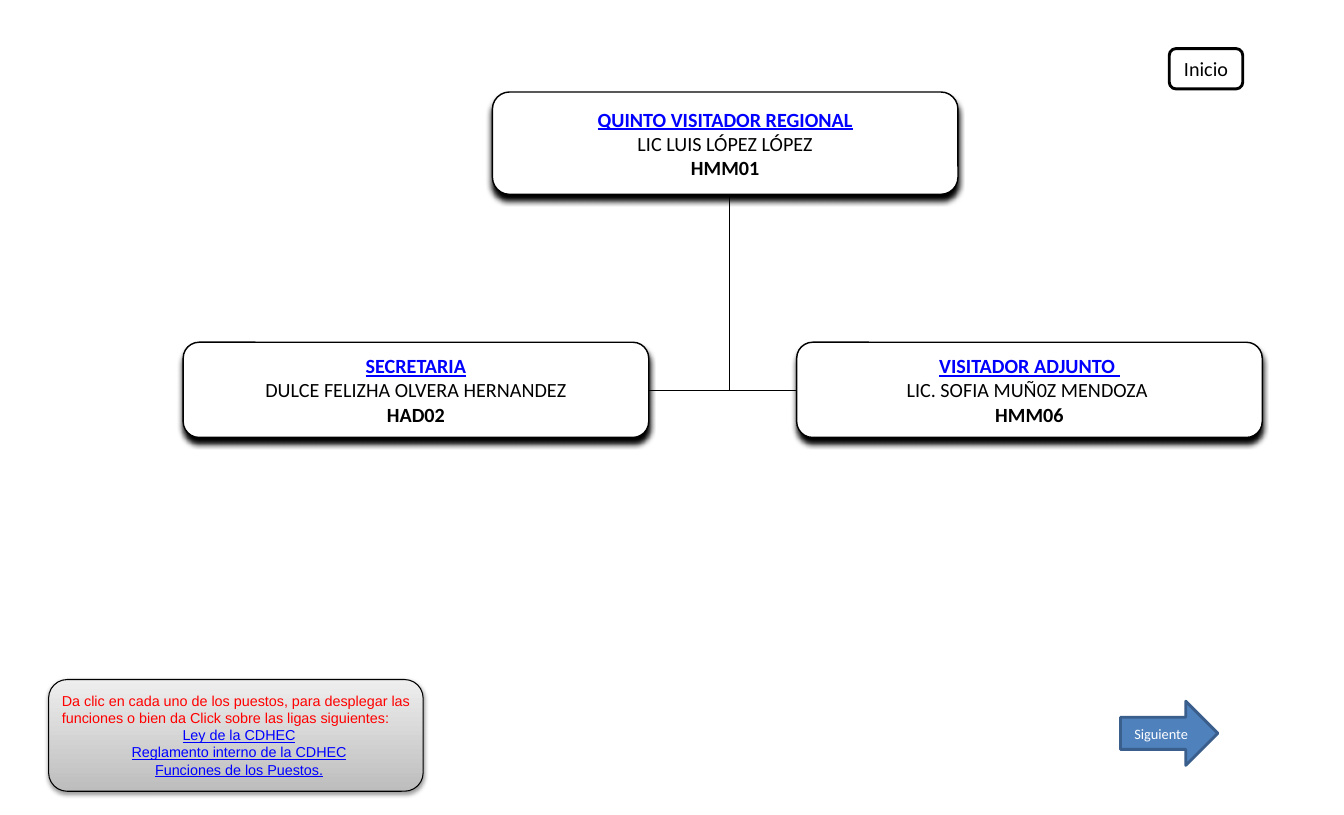
from lxml.etree import SubElement
from pptx import Presentation
from pptx.dml.color import RGBColor
from pptx.enum.shapes import MSO_CONNECTOR, MSO_SHAPE
from pptx.enum.text import MSO_ANCHOR, MSO_AUTO_SIZE, PP_ALIGN
from pptx.oxml.ns import qn
from pptx.util import Inches, Pt

WIDTH, HEIGHT = Inches(12.99), Inches(7.88)
COLUMN, ROW = WIDTH / 100, HEIGHT / 100

BLACK = RGBColor(0x00, 0x00, 0x00)
WHITE = RGBColor(0xFF, 0xFF, 0xFF)
LINK_BLUE = RGBColor(0x00, 0x00, 0xFF)
NOTICE_RED = RGBColor(0xFF, 0x00, 0x00)
ARROW_BLUE = RGBColor(0x4F, 0x81, 0xBD)
ARROW_EDGE = RGBColor(0x3A, 0x5F, 0x8C)
PANEL_DARK = RGBColor(0xBD, 0xBD, 0xBD)
PANEL_LIGHT = RGBColor(0xEE, 0xEE, 0xEE)

POST_WIDTH = 34.64
POST_ROW, POST_HEIGHT = 42, 11.68
BRANCH_ROW = 47.97
TRUNK_COLUMN = 54.27

POSTS = [
    (36.64, 11.29, 12.56,
     ["QUINTO VISITADOR REGIONAL", "LIC LUIS LÓPEZ LÓPEZ", "HMM01"]),
    (13.63, POST_ROW, POST_HEIGHT,
     ["SECRETARIA", "DULCE FELIZHA OLVERA HERNANDEZ", "HAD02"]),
    (59.28, POST_ROW, POST_HEIGHT,
     ["VISITADOR ADJUNTO ", "LIC. SOFIA MUÑ0Z MENDOZA ", "HMM06"]),
]
NOTICE = [
    "Da clic en cada uno de los puestos, para desplegar las funciones "
    "o bien da Click sobre las ligas siguientes:",
    "Ley de la CDHEC",
    "Reglamento interno de la CDHEC",
    "Funciones de los Puestos.",
]


def place(column, row, columns, rows):
    return (round(column * COLUMN), round(row * ROW),
            round(columns * COLUMN), round(rows * ROW))


def add_line(slide, start, end):
    line = slide.shapes.add_connector(
        MSO_CONNECTOR.STRAIGHT, *place(*start, *end))
    line.line.color.rgb = BLACK
    line.line.width = Pt(0.75)
    SubElement(line._element.spPr, qn("a:effectLst"))


def add_panel(slide, kind, area, fill, edge, edge_width):
    panel = slide.shapes.add_shape(kind, *place(*area))
    panel.shadow.inherit = False
    if fill is not None:
        panel.fill.solid()
        panel.fill.fore_color.rgb = fill
    panel.line.color.rgb = edge
    panel.line.width = Pt(edge_width)
    return panel


def cast_shadow(panel, opacity, blur, distance):
    effects = panel._element.spPr.find(qn("a:effectLst"))
    shadow = SubElement(
        effects, qn("a:outerShdw"), blurRad=str(Pt(blur)),
        dist=str(Pt(distance)), dir="5400000", rotWithShape="0")
    color = SubElement(shadow, qn("a:srgbClr"), val=str(BLACK))
    SubElement(color, qn("a:alpha"), val=str(opacity * 1000))


def format_text(paragraph, font_name, size, color, bold=False,
                underline=False, align=PP_ALIGN.CENTER):
    paragraph.alignment = align
    for run in paragraph.runs:
        run.font.name = font_name
        run.font.size = Pt(size)
        run.font.color.rgb = color
        run.font.bold = bold
        run.font.underline = underline


def add_post(slide, column, row, rows, lines):
    post = add_panel(slide, MSO_SHAPE.ROUNDED_RECTANGLE,
                     (column, row, POST_WIDTH, rows), WHITE, BLACK, 1)
    cast_shadow(post, 100, 4, 4)
    frame = post.text_frame
    frame.text = "\n".join(lines)
    frame.word_wrap = False
    frame.vertical_anchor = MSO_ANCHOR.MIDDLE
    frame.margin_left = frame.margin_right = Inches(0.17)
    frame.margin_top = frame.margin_bottom = Inches(0.09)
    title, holder, code = frame.paragraphs
    format_text(title, "Calibri", 14, LINK_BLUE, bold=True, underline=True)
    format_text(holder, "Calibri", 14, BLACK)
    format_text(code, "Calibri", 14, BLACK, bold=True)


def add_button(slide, kind, area, label, size, color, fill, edge):
    button = add_panel(slide, kind, area, fill, edge, 2)
    button.text_frame.text = label
    button.text_frame.vertical_anchor = MSO_ANCHOR.MIDDLE
    format_text(button.text_frame.paragraphs[0], "Calibri", size, color)


def add_notice(slide):
    panel = add_panel(slide, MSO_SHAPE.ROUNDED_RECTANGLE,
                      (3.62, 83.38, 27.87, 13.71), None, BLACK, 0.75)
    panel.fill.gradient()
    panel.fill.gradient_angle = 90
    for stop, color in zip(panel.fill.gradient_stops,
                           (PANEL_DARK, PANEL_LIGHT)):
        stop.color.rgb = color
    for stop, position in zip(panel.fill.gradient_stops, (0, 1)):
        stop.position = position
    cast_shadow(panel, 38, 3.1, 1.6)

    notice = slide.shapes.add_textbox(*place(3.85, 84.26, 27.87, 11.93))
    frame = notice.text_frame
    frame.text = "\n".join(NOTICE)
    frame.word_wrap = True
    frame.auto_size = MSO_AUTO_SIZE.SHAPE_TO_FIT_TEXT
    instruction, *links = frame.paragraphs
    format_text(instruction, "Arial", 10, NOTICE_RED, align=PP_ALIGN.LEFT)
    for link in links:
        format_text(link, "Arial", 10, LINK_BLUE, underline=True)


def main():
    deck = Presentation()
    deck.slide_width, deck.slide_height = WIDTH, HEIGHT
    slide = deck.slides.add_slide(deck.slide_layouts.get_by_name("Blank"))

    add_line(slide, (TRUNK_COLUMN, 20.05), (TRUNK_COLUMN, BRANCH_ROW))
    add_line(slide, (47.04, BRANCH_ROW), (60.82, BRANCH_ROW))
    for post in POSTS:
        add_post(slide, *post)
    add_button(slide, MSO_SHAPE.ROUNDED_RECTANGLE, (87, 5.96, 5.47, 4.95),
               "Inicio", 14, BLACK, WHITE, BLACK)
    add_notice(slide)
    add_button(slide, MSO_SHAPE.RIGHT_ARROW, (83.37, 86.04, 7.24, 7.87),
               "Siguiente", 10, WHITE, ARROW_BLUE, ARROW_EDGE)
    deck.save("out.pptx")


if __name__ == "__main__":
    main()
